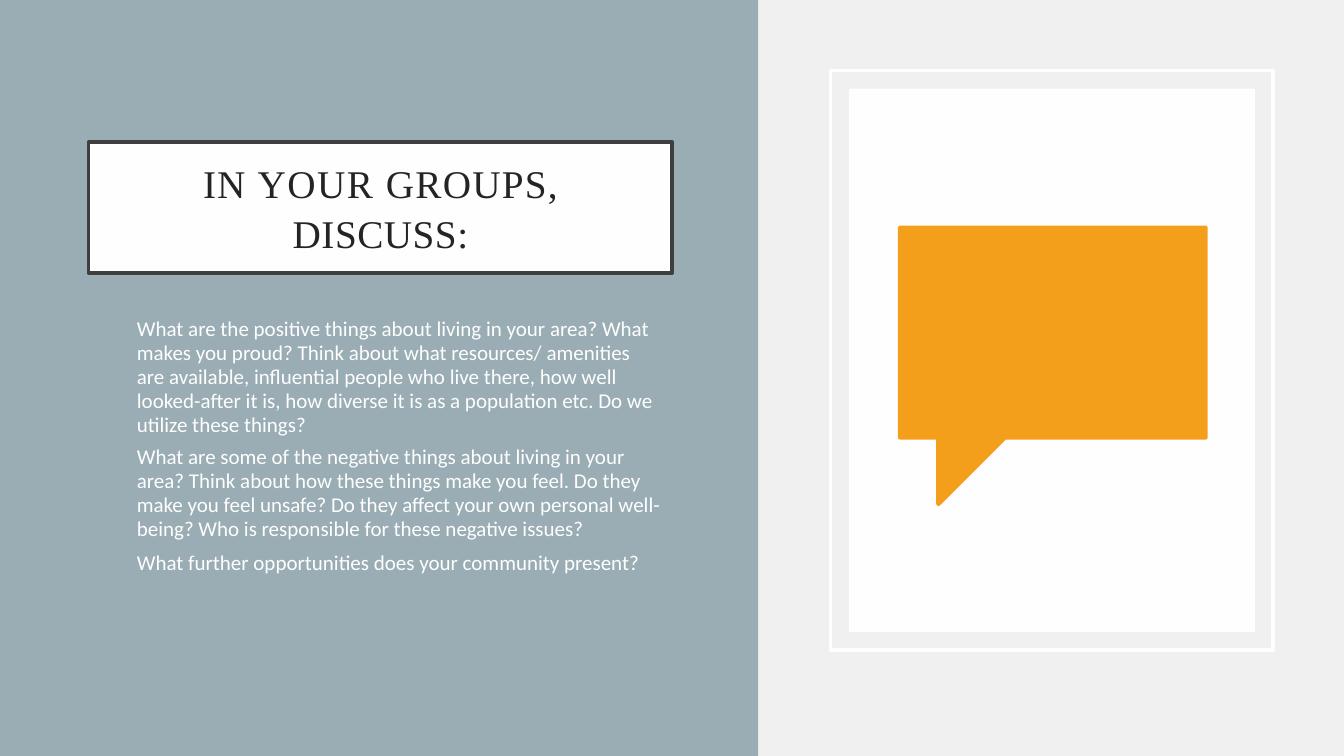
from lxml import etree
from pptx import Presentation
from pptx.dml.color import RGBColor
from pptx.enum.shapes import MSO_SHAPE
from pptx.enum.text import MSO_ANCHOR, PP_ALIGN
from pptx.oxml.ns import qn
from pptx.util import Pt

RECTANGLE = MSO_SHAPE.RECTANGLE
CENTER, LEFT = PP_ALIGN.CENTER, PP_ALIGN.LEFT
MIDDLE, TOP = MSO_ANCHOR.MIDDLE, MSO_ANCHOR.TOP


def color(hex_string):
    return RGBColor.from_string(hex_string)


class DiscussionSlide:
    GREY, SLATE, WHITE = "F0F0F0", "9AADB4", "FEFEFE"
    BORDER, INK, ORANGE = "3F3F3F", "242424", "F49F1B"
    TITLE_FONT, BODY_FONT = "Times New Roman", "Calibri"
    TITLE_SIZE, BODY_SIZE = 28, 15

    def __init__(self, slide):
        self.slide = slide
        slide.background.fill.solid()
        slide.background.fill.fore_color.rgb = color(self.GREY)

    def paint(self, shape, fill, line, width):
        shape.shadow.inherit = False
        if fill:
            shape.fill.solid()
            shape.fill.fore_color.rgb = color(fill)
        else:
            shape.fill.background()
        if line:
            shape.line.color.rgb = color(line)
            shape.line.width = Pt(width)
            # Rounded corners on the outline
            etree.SubElement(shape.line._get_or_add_ln(), qn("a:round"))
        else:
            shape.line.fill.background()
        return shape

    def rectangle(self, left, top, width, height, fill=None, line=None, line_width=2.5):
        shape = self.slide.shapes.add_shape(
            RECTANGLE, Pt(left), Pt(top), Pt(width), Pt(height))
        return self.paint(shape, fill, line, line_width)

    def outline(self, points, fill, line_width):
        corners = [(Pt(x), Pt(y)) for x, y in points]
        builder = self.slide.shapes.build_freeform(*corners[0], scale=1.0)
        builder.add_line_segments(corners[1:], close=True)
        return self.paint(builder.convert_to_shape(), fill, fill, line_width)

    def frame(self, shape, anchor):
        frame = shape.text_frame
        frame.word_wrap = True
        frame.vertical_anchor = anchor
        frame.margin_left = frame.margin_right = 0
        frame.margin_top = frame.margin_bottom = 0
        return frame

    def run(self, paragraph, text, font, size, ink, tracking=0):
        run = paragraph.add_run()
        run.text = text
        run.font.name = font
        run.font.size = Pt(size)
        run.font.color.rgb = color(ink)
        if tracking:
            run.font._element.set("spc", str(round(tracking * 100)))

    def title(self, shape, lines):
        frame = self.frame(shape, MIDDLE)
        for index, line in enumerate(lines):
            paragraph = frame.add_paragraph() if index else frame.paragraphs[0]
            paragraph.alignment = CENTER
            if index:
                paragraph.space_before = Pt(2)
            for text, tracking in line:
                self.run(paragraph, text, self.TITLE_FONT, self.TITLE_SIZE, self.INK, tracking)

    def question(self, left, top, width, height, text, spacing):
        box = self.slide.shapes.add_textbox(Pt(left), Pt(top), Pt(width), Pt(height))
        paragraph = self.frame(box, TOP).paragraphs[0]
        paragraph.alignment = LEFT
        paragraph.line_spacing = spacing
        self.run(paragraph, text, self.BODY_FONT, self.BODY_SIZE, self.WHITE)


TITLE_LINES = [
    [("IN ", 0.8), ("YOUR ", 1.1), ("GROUPS,", 0.9)],
    [("D", 0.5), ("ISCUSS:", 0.4)],
]
QUESTION_LEFT = 97.8
# Top, width, height, line spacing, text
QUESTIONS = [
    (226.8, 373, 86.4, 0.95,
     "What are the positive things about living in your area? What makes you proud? "
     "Think about what resources/ amenities are available, influential people who live "
     "there, how well looked-after it is, how diverse it is as a population etc. "
     "Do we utilize these things?"),
    (318.2, 378.7, 69.1, 0.95,
     "What are some of the negative things about living in your area? Think about how "
     "these things make you feel. Do they make you feel unsafe? Do they affect your own "
     "personal well- being? Who is responsible for these negative issues?"),
    (391.7, 378.7, 18.8, Pt(18.8),
     "What further opportunities does your community present?"),
]
BUBBLE = [(861.1, 162.7), (861.1, 312.5), (717.8, 312.5), (670.3, 360),
          (670.3, 312.5), (643, 312.5), (643, 162.7)]


def main():
    presentation = Presentation()
    presentation.slide_width, presentation.slide_height = Pt(960), Pt(540)
    page = DiscussionSlide(presentation.slides.add_slide(presentation.slide_layouts[6]))

    # Left panel with the heading
    page.rectangle(0, 0, 541.5, 540, fill=page.SLATE)
    heading = page.rectangle(63.3, 101.4, 416.9, 93.6, fill=page.WHITE, line=page.BORDER)
    page.title(heading, TITLE_LINES)

    # Framed card with the speech bubble
    page.rectangle(593.3, 50.4, 316.1, 414, line=page.WHITE)
    page.rectangle(606.3, 63.4, 290.1, 388, fill=page.WHITE)
    page.outline(BUBBLE, page.ORANGE, 3.18)

    # Discussion questions
    for top, width, height, spacing, text in QUESTIONS:
        page.question(QUESTION_LEFT, top, width, height, text, spacing)

    presentation.save("out.pptx")


if __name__ == "__main__":
    main()
